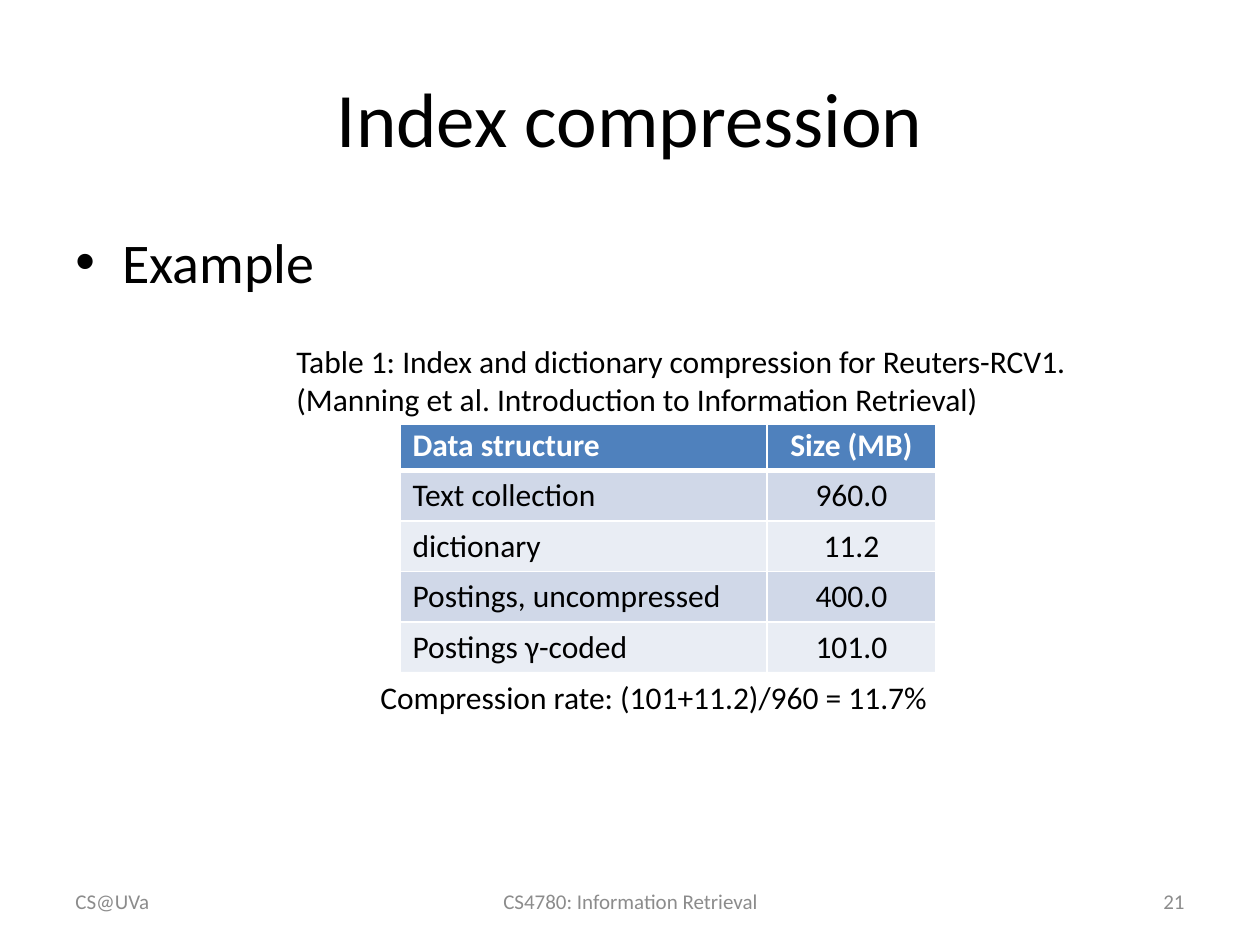
from pptx import Presentation
from pptx.dml.color import RGBColor
from pptx.enum.text import MSO_ANCHOR as Anchor, PP_ALIGN as Align
from pptx.oxml import parse_xml
from pptx.oxml.ns import nsdecls

# Content
TITLE = "Index compression"
BULLET = "Example"
CAPTION = ("Table 1: Index and dictionary compression for Reuters-RCV1. "
           "(Manning et al. Introduction to Information Retrieval)")
RATE = "Compression rate: (101+11.2)/960 = 11.7%"
ROWS = [
    ("Data structure", "Size (MB)"),
    ("Text collection", "960.0"),
    ("dictionary", "11.2"),
    ("Postings, uncompressed", "400.0"),
    ("Postings γ-coded", "101.0"),
]
FOOTERS = [  # text, left, width, alignment
    ("CS@UVa", 63, 294, Align.LEFT),
    ("CS4780: Information Retrieval", 431, 399, Align.CENTER),
    ("21", 903, 294, Align.RIGHT),
]

# Theme
THEME = {
    "font": "Calibri", "text": "000000", "white": "FFFFFF", "footer": "8C8C8C",
    "header": "4F81BD", "bands": ("D0D8E8", "E9EDF4"),
    "title_size": 44, "bullet_size": 32, "body_size": 18, "footer_size": 12,
}

# Layout in px
PX_PER_INCH = 126
TABLE_AT = (400, 420)
COLUMNS = (367, 169)
ROW_HEIGHT = 50
BULLET_INDENT = 47


def px(value):
    return round(value * 914400 / PX_PER_INCH)


def color(name):
    return RGBColor.from_string(THEME.get(name, name))


def write(frame, text, size, ink="text", align=Align.LEFT, anchor=Anchor.TOP, bold=False):
    frame.word_wrap = True
    frame.vertical_anchor = anchor
    para = frame.paragraphs[0]
    para.alignment = align
    span = para.add_run()
    span.text = text
    style = {"name": THEME["font"], "size": THEME[size] * 12700, "bold": bold}
    for key, value in style.items():
        setattr(span.font, key, value)
    span.font.color.rgb = color(ink)
    return para


def add_text(page, area, *args, fill=None, **style):
    box = page.shapes.add_textbox(*map(px, area))
    if fill:
        box.fill.solid()
        box.fill.fore_color.rgb = color(fill)
    return write(box.text_frame, *args, **style)


def add_bullet(para):
    props = para._p.get_or_add_pPr()
    props.set("marL", str(px(BULLET_INDENT)))
    props.set("indent", str(-px(BULLET_INDENT)))
    props.append(parse_xml(f'<a:buFont {nsdecls("a")} typeface="Arial"/>'))
    props.append(parse_xml(f'<a:buChar {nsdecls("a")} char="•"/>'))


def set_borders(cell, bottom):
    props = cell._tc.get_or_add_tcPr()
    widths = {"lnL": 1, "lnR": 1, "lnT": 1, "lnB": bottom}
    for index, (side, points) in enumerate(widths.items()):
        props.insert(index, parse_xml(
            f'<a:{side} {nsdecls("a")} w="{points * 12700}"><a:solidFill>'
            f'<a:srgbClr val="{THEME["white"]}"/></a:solidFill></a:{side}>'))


def add_size_table(page):
    area = (*TABLE_AT, sum(COLUMNS), ROW_HEIGHT * len(ROWS))
    table = page.shapes.add_table(len(ROWS), len(COLUMNS), *map(px, area)).table
    for column, width in zip(table.columns, COLUMNS):
        column.width = px(width)
    for r, values in enumerate(ROWS):
        header = r == 0
        for c, value in enumerate(values):
            cell = table.cell(r, c)
            cell.fill.solid()
            cell.fill.fore_color.rgb = color("header" if header else THEME["bands"][(r - 1) % 2])
            set_borders(cell, bottom=3 if header else 1)
            write(cell.text_frame, value, "body_size", "white" if header else "text",
                  Align.CENTER if c else Align.LEFT, bold=header)


def main():
    deck = Presentation()
    deck.slide_width, deck.slide_height = px(1260), px(945)
    page = deck.slides.add_slide(deck.slide_layouts[5])

    # Title and bullet
    title = page.shapes.title
    title.left, title.top, title.width, title.height = map(px, (63, 38, 1134, 157))
    write(title.text_frame, TITLE, "title_size", align=Align.CENTER, anchor=Anchor.MIDDLE)
    add_bullet(add_text(page, (63, 221, 1134, 624), BULLET, "bullet_size"))

    # Table, with the result and the caption around it
    add_size_table(page)
    add_text(page, (368, 672, 588, 50), RATE, "body_size", fill="white")
    add_text(page, (284, 336, 809, 89), CAPTION, "body_size", fill="white")

    # Footer row
    for text, left, width, align in FOOTERS:
        add_text(page, (left, 876, width, 50), text, "footer_size", "footer",
                 align=align, anchor=Anchor.MIDDLE)

    deck.save("out.pptx")


if __name__ == "__main__":
    main()
